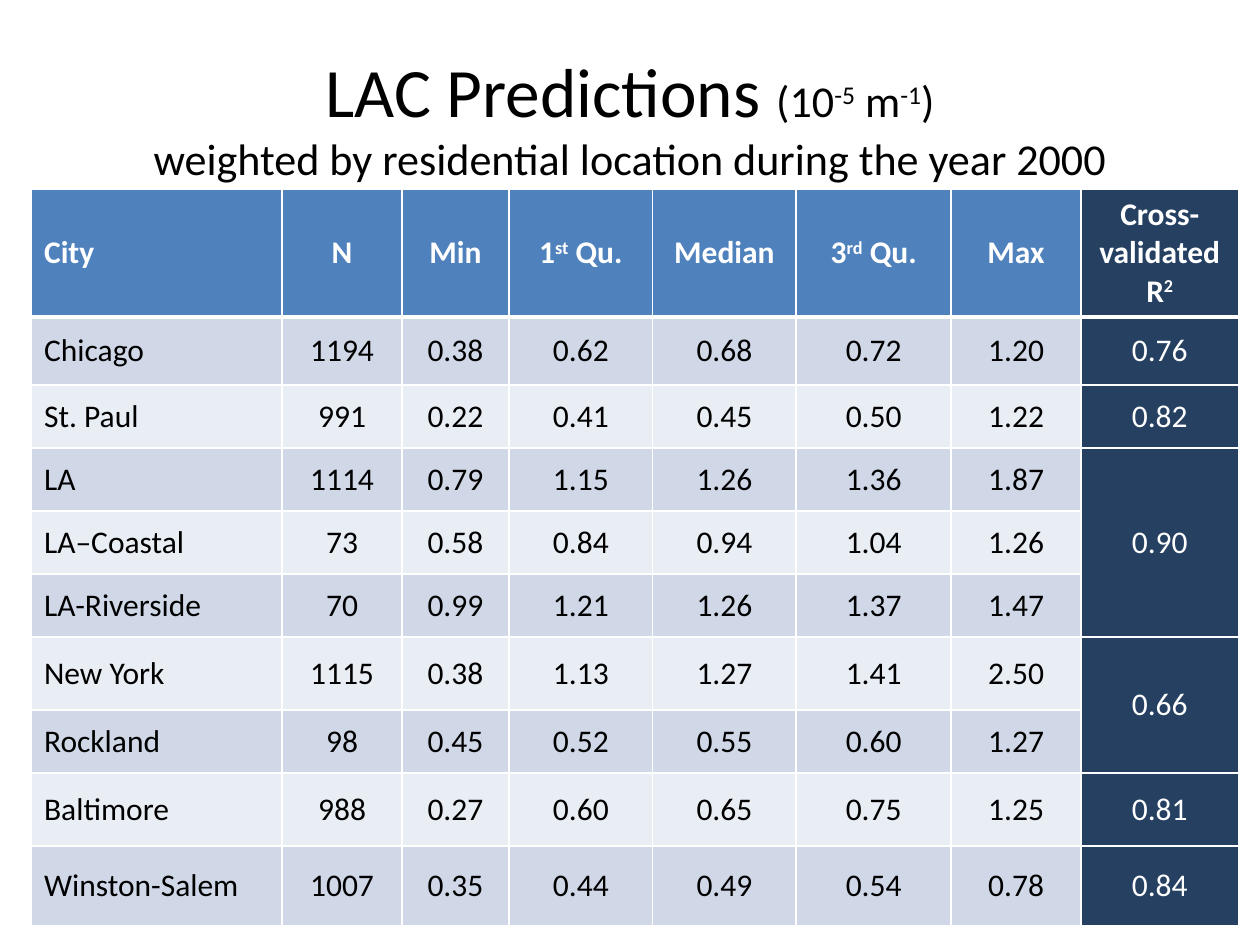
from dataclasses import dataclass

from lxml import etree
from pptx import Presentation
from pptx.dml.color import RGBColor
from pptx.enum.text import MSO_ANCHOR, PP_ALIGN
from pptx.oxml.ns import qn
from pptx.util import Inches, Pt

MIDDLE = MSO_ANCHOR.MIDDLE
LEFT, CENTER = PP_ALIGN.LEFT, PP_ALIGN.CENTER

SLIDE_W, SLIDE_H = 10, 7.5
FONT = "Calibri"
COLORS = {
    "header": "4F81BD",
    "r_squared": "254061",
    "odd_row": "D0D8E8",
    "even_row": "E9EDF4",
    "dark_text": "000000",
    "light_text": "FFFFFF",
    "border": "FFFFFF",
}
HEADER_BORDERS = {"lnL": 1, "lnR": 1, "lnT": 1, "lnB": 3}

COLUMN_WIDTHS = [1.99, 0.95, 0.85, 1.14, 1.14, 1.23, 1.03, 1.25]
ROW_HEIGHTS = [0.63, 0.54, 0.5, 0.5, 0.5, 0.5, 0.58, 0.5, 0.58, 0.63]
TABLE_LEFT, TABLE_TOP, TABLE_HEIGHT = 0.25, 1.5, 5.83

# Text between two carets is superscript.
HEADINGS = ["City", "N", "Min", "1^st^ Qu.", "Median", "3^rd^ Qu.", "Max",
            "Cross-validated R^2^"]


@dataclass(frozen=True)
class City:
    name: str
    n: int
    quantiles: str
    r_squared: str = ""
    shared_rows: int = 1

    def cells(self) -> list[str]:
        return [self.name, str(self.n), *self.quantiles.split(), self.r_squared]


@dataclass(frozen=True)
class TextStyle:
    size: float
    color: str
    bold: bool = False


CITIES = [
    City("Chicago", 1194, "0.38 0.62 0.68 0.72 1.20", "0.76"),
    City("St. Paul", 991, "0.22 0.41 0.45 0.50 1.22", "0.82"),
    City("LA", 1114, "0.79 1.15 1.26 1.36 1.87", "0.90", shared_rows=3),
    City("LA–Coastal", 73, "0.58 0.84 0.94 1.04 1.26"),
    City("LA-Riverside", 70, "0.99 1.21 1.26 1.37 1.47"),
    City("New York", 1115, "0.38 1.13 1.27 1.41 2.50", "0.66", shared_rows=2),
    City("Rockland", 98, "0.45 0.52 0.55 0.60 1.27"),
    City("Baltimore", 988, "0.27 0.60 0.65 0.75 1.25", "0.81"),
    City("Winston-Salem", 1007, "0.35 0.44 0.49 0.54 0.78", "0.84"),
]


def add_marked_text(paragraph, marked: str, style: TextStyle) -> None:
    """Add runs, raising the parts that stand between carets."""
    for position, part in enumerate(marked.split("^")):
        if not part:
            continue
        run = paragraph.add_run()
        run.text = part
        formats = {"name": FONT, "size": Pt(style.size), "bold": style.bold}
        for attribute, value in formats.items():
            setattr(run.font, attribute, value)
        run.font.color.rgb = RGBColor.from_string(COLORS[style.color])
        if position % 2:
            run.font._element.set("baseline", "30000")


def add_title(slide) -> None:
    box = slide.shapes.add_textbox(
        Inches(SLIDE_W * 0.05), Inches(SLIDE_H * 0.04),
        Inches(SLIDE_W * 0.9), Inches(1.25))
    frame = box.text_frame
    frame.word_wrap = True
    frame.vertical_anchor = MIDDLE
    paragraph = frame.paragraphs[0]
    paragraph.alignment = CENTER
    subtitle = TextStyle(25.2, "dark_text")
    add_marked_text(paragraph, "LAC Predictions ", TextStyle(39.6, "dark_text"))
    add_marked_text(paragraph, "(10^-5^ m^-1^)", subtitle)
    paragraph.add_line_break()
    add_marked_text(
        paragraph, "weighted by residential location during the year 2000", subtitle)


def add_header_borders(cell) -> None:
    properties = cell._tc.get_or_add_tcPr()
    for side, points in HEADER_BORDERS.items():
        line = etree.SubElement(properties, qn(f"a:{side}"), w=str(Pt(points)))
        fill = etree.SubElement(line, qn("a:solidFill"))
        etree.SubElement(fill, qn("a:srgbClr"), val=COLORS["border"])


def fill_cell(cell, marked: str, row: int, column: int) -> None:
    is_header = row == 0
    is_r_squared = column == len(HEADINGS) - 1
    if is_header:
        add_header_borders(cell)
    if is_r_squared:
        background = "r_squared"
    elif is_header:
        background = "header"
    else:
        background = "odd_row" if row % 2 else "even_row"
    cell.fill.solid()
    cell.fill.fore_color.rgb = RGBColor.from_string(COLORS[background])
    cell.vertical_anchor = MIDDLE
    paragraph = cell.text_frame.paragraphs[0]
    paragraph.alignment = CENTER if column else LEFT
    color = "light_text" if is_header or is_r_squared else "dark_text"
    add_marked_text(paragraph, marked, TextStyle(18, color, is_header))


def add_prediction_table(slide) -> None:
    frame = slide.shapes.add_table(
        len(ROW_HEIGHTS), len(COLUMN_WIDTHS), Inches(TABLE_LEFT), Inches(TABLE_TOP),
        Inches(sum(COLUMN_WIDTHS)), Inches(TABLE_HEIGHT))
    table = frame.table
    for column, width in zip(table.columns, COLUMN_WIDTHS):
        column.width = Inches(width)
    for row, height in zip(table.rows, ROW_HEIGHTS):
        row.height = Inches(height)
    frame.height = Inches(TABLE_HEIGHT)  # the heading wraps to three lines

    for row, texts in enumerate([HEADINGS, *(city.cells() for city in CITIES)]):
        for column, marked in enumerate(texts):
            fill_cell(table.cell(row, column), marked, row, column)

    last = len(HEADINGS) - 1
    for row, city in enumerate(CITIES, start=1):
        if city.shared_rows > 1:
            table.cell(row, last).merge(table.cell(row + city.shared_rows - 1, last))


def main() -> None:
    presentation = Presentation()
    presentation.slide_width = Inches(SLIDE_W)
    presentation.slide_height = Inches(SLIDE_H)
    slide = presentation.slides.add_slide(presentation.slide_layouts[6])
    add_prediction_table(slide)
    add_title(slide)
    presentation.save("out.pptx")


if __name__ == "__main__":
    main()
